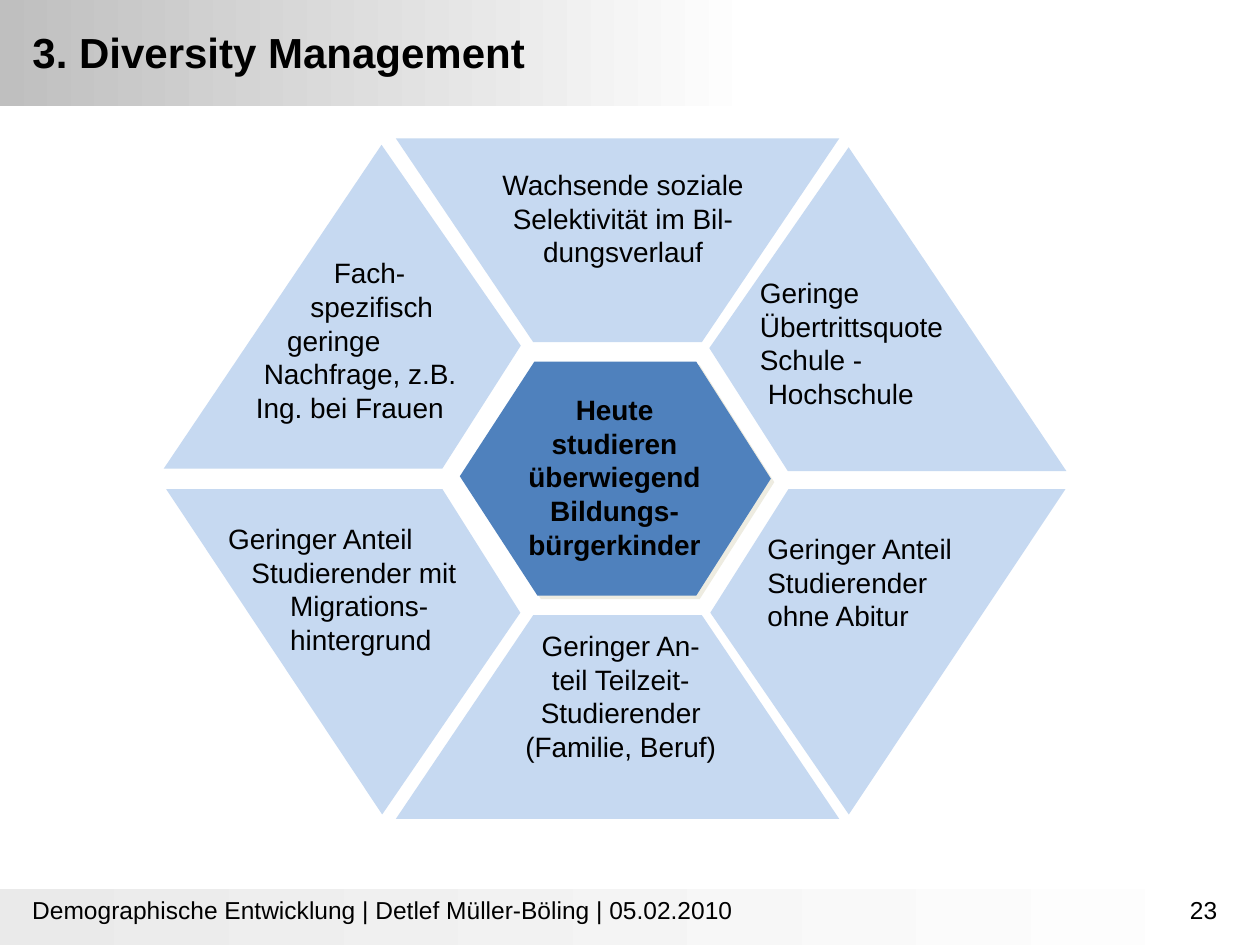
from lxml import etree
from pptx import Presentation
from pptx.dml.color import RGBColor
from pptx.enum.text import MSO_ANCHOR, MSO_AUTO_SIZE, PP_ALIGN
from pptx.oxml.ns import qn
from pptx.util import Cm, Pt

LEFT, CENTER, RIGHT = PP_ALIGN.LEFT, PP_ALIGN.CENTER, PP_ALIGN.RIGHT
TOP, NO_FIT = MSO_ANCHOR.TOP, MSO_AUTO_SIZE.NONE
TITLE_ONLY = 5
PAGE_WIDTH, PAGE_HEIGHT = 25.4, 19.05
PALE, BLUE, SHADE = "C6D9F1", "4F81BD", "EEECE1"

TRAPEZOID = [(0.31, 1), (0.69, 1), (1, 0), (0, 0)]
KITE = [(0.22, 1), (0, 0.62), (0.39, 0), (1, 1)]
HEXAGON = [(0.24, 0), (0.76, 0), (1, 0.5), (0.76, 1), (0.25, 1), (0, 0.49)]

# Each petal: box, outline, mirrored in x, mirrored in y, label box, alignment, (line, indent)
PETALS = [
    ((7.98, 2.79, 8.94, 4.11), TRAPEZOID, False, False, (2.13, 0.59, 4.9, 2.06), CENTER,
     [("Wachsende soziale", 0), ("Selektivität im Bil-", 0), ("dungsverlauf", 0)]),
    ((14.3, 2.97, 7.2, 6.53), KITE, False, False, (1.02, 2.59, 3.9, 2.74), LEFT,
     [("Geringe", 0), ("Übertrittsquote", 0), ("Schule -", 0), ("Hochschule", 0.16)]),
    ((14.32, 9.86, 7.16, 6.56), KITE, False, True, (1.15, 0.86, 3.9, 2.03), LEFT,
     [("Geringer Anteil", 0), ("Studierender", 0), ("ohne Abitur", 0)]),
    ((7.98, 12.4, 8.94, 4.11), TRAPEZOID, False, True, (2.59, 0.27, 3.89, 2.74), CENTER,
     [("Geringer An-", 0), ("teil Teilzeit-", 0), ("Studierender", 0), ("(Familie, Beruf)", 0)]),
    ((3.35, 9.86, 7.14, 6.56), KITE, True, True, (1.25, 0.66, 5.33, 2.72), LEFT,
     [("Geringer Anteil", 0), ("Studierender mit", 0.47), ("Migrations-", 1.25),
      ("hintergrund", 1.25)]),
    ((3.3, 2.92, 7.2, 6.53), KITE, True, False, (1.86, 2.24, 5.36, 3.4), LEFT,
     [("Fach-", 1.57), ("spezifisch", 1.1), ("geringe", 0.63), ("Nachfrage, z.B.", 0.16),
      ("Ing. bei Frauen", 0)]),
]


def color(value):
    """Turn a hex string into a colour."""
    return RGBColor.from_string(value)


def apply(target, values):
    """Set every attribute named in values on target."""
    for name, value in values.items():
        setattr(target, name, value)


def write(frame, lines, size, align=LEFT, bold=False, inset=None, wrap=True):
    """Fill a text frame with (line, indent) pairs in one format."""
    apply(frame, {"word_wrap": wrap, "auto_size": NO_FIT, "vertical_anchor": TOP})
    if inset is not None:
        sides = ("left", "top", "right", "bottom")
        apply(frame, {f"margin_{side}": Cm(inset) for side in sides})
    for index, (line, indent) in enumerate(lines):
        para = frame.add_paragraph() if index else frame.paragraphs[0]
        para.alignment = align
        if indent:
            para._p.get_or_add_pPr().set("marL", str(Cm(indent)))
        span = para.add_run()
        span.text = line
        apply(span.font, {"name": "Arial", "size": Pt(size), "bold": bold})
        span.font.color.rgb = color("000000")


def add_label(page, box, lines, size, **options):
    """Add a text box that holds the given lines."""
    label = page.shapes.add_textbox(*map(Cm, box))
    write(label.text_frame, lines, size, **options)


def add_band(page, box, stops):
    """Add a band that fades from left to right."""
    band = page.shapes.add_shape(1, *map(Cm, box))
    band.shadow.inherit = False
    band.line.fill.background()
    band.fill.gradient()
    band.fill.gradient_angle = 180
    for stop, (position, value) in zip(band.fill.gradient_stops, stops):
        stop.position = position
        stop.color.rgb = color(value)


def add_outline(page, box, outline, fill):
    """Draw a closed outline, given in fractions of its box."""
    left, top, width, height = box
    points = [(Cm(left + x * width), Cm(top + y * height)) for x, y in outline]
    builder = page.shapes.build_freeform(*points[0])
    builder.add_line_segments(points[1:], close=True)
    shape = builder.convert_to_shape()
    shape.fill.solid()
    shape.fill.fore_color.rgb = color(fill)
    shape.line.fill.background()
    shape.shadow.inherit = False
    return shape


def inside(box, part):
    """Shift a part's box by the corner of the box around it."""
    return box[0] + part[0], box[1] + part[1], part[2], part[3]


def add_petal(page, box, outline, flip_x, flip_y, label_box, align, lines):
    """Add one outer segment with its label."""
    turned = [(1 - x if flip_x else x, 1 - y if flip_y else y) for x, y in outline]
    add_outline(page, box, turned, PALE)
    add_label(page, inside(box, label_box), lines, 16, align=align, inset=0, wrap=False)


def add_core(page, box):
    """Add the central hexagon with its offset shadow and label."""
    core = add_outline(page, box, HEXAGON, BLUE)
    effects = core.element.spPr.find(qn("a:effectLst"))
    shadow = etree.SubElement(effects, qn("a:outerShdw"), dist=str(Pt(2.8)),
                              dir="2700000", algn="ctr", rotWithShape="0")
    etree.SubElement(shadow, qn("a:srgbClr"), val=SHADE)
    lines = [("Heute studieren überwiegend Bildungs-bürgerkinder", 0)]
    add_label(page, inside(box, (1.04, 0.63, 4.16, 3.4)), lines, 16,
              align=CENTER, bold=True, inset=0)


def add_header(page, box):
    """Add the top band and set the title on it."""
    add_band(page, box, [(0.4, "FFFFFF"), (1, "BFBFBF")])
    title = page.shapes.title
    title.element.getparent().append(title.element)
    left, top, width, height = map(Cm, inside(box, (0.4, 0.4, 19.05, 1.78)))
    apply(title, {"left": left, "top": top, "width": width, "height": height})
    write(title.text_frame, [("3. Diversity Management", 0)], 24, bold=True)


def add_footer(page, box):
    """Add the bottom band with the talk's details and the page number."""
    add_band(page, box, [(0, "FFFFFF"), (1, "EAEAEA")])
    details = "Demographische Entwicklung | Detlef Müller-Böling | 05.02.2010"
    add_label(page, inside(box, (0.4, -0.02, 17.4, 1.32)), [(details, 0)], 14)
    add_label(page, inside(box, (18.87, -0.02, 5.92, 1.32)), [("23", 0)], 14, align=RIGHT)


def main():
    """Build the slide and save it."""
    deck = Presentation()
    apply(deck, {"slide_width": Cm(PAGE_WIDTH), "slide_height": Cm(PAGE_HEIGHT)})
    page = deck.slides.add_slide(deck.slide_layouts[TITLE_ONLY])
    add_header(page, (0, 0, PAGE_WIDTH, 2.13))
    add_footer(page, (0, 17.93, PAGE_WIDTH, 1.12))
    for petal in PETALS:
        add_petal(page, *petal)
    add_core(page, (9.27, 7.29, 6.27, 4.72))
    deck.save("out.pptx")


if __name__ == "__main__":
    main()
